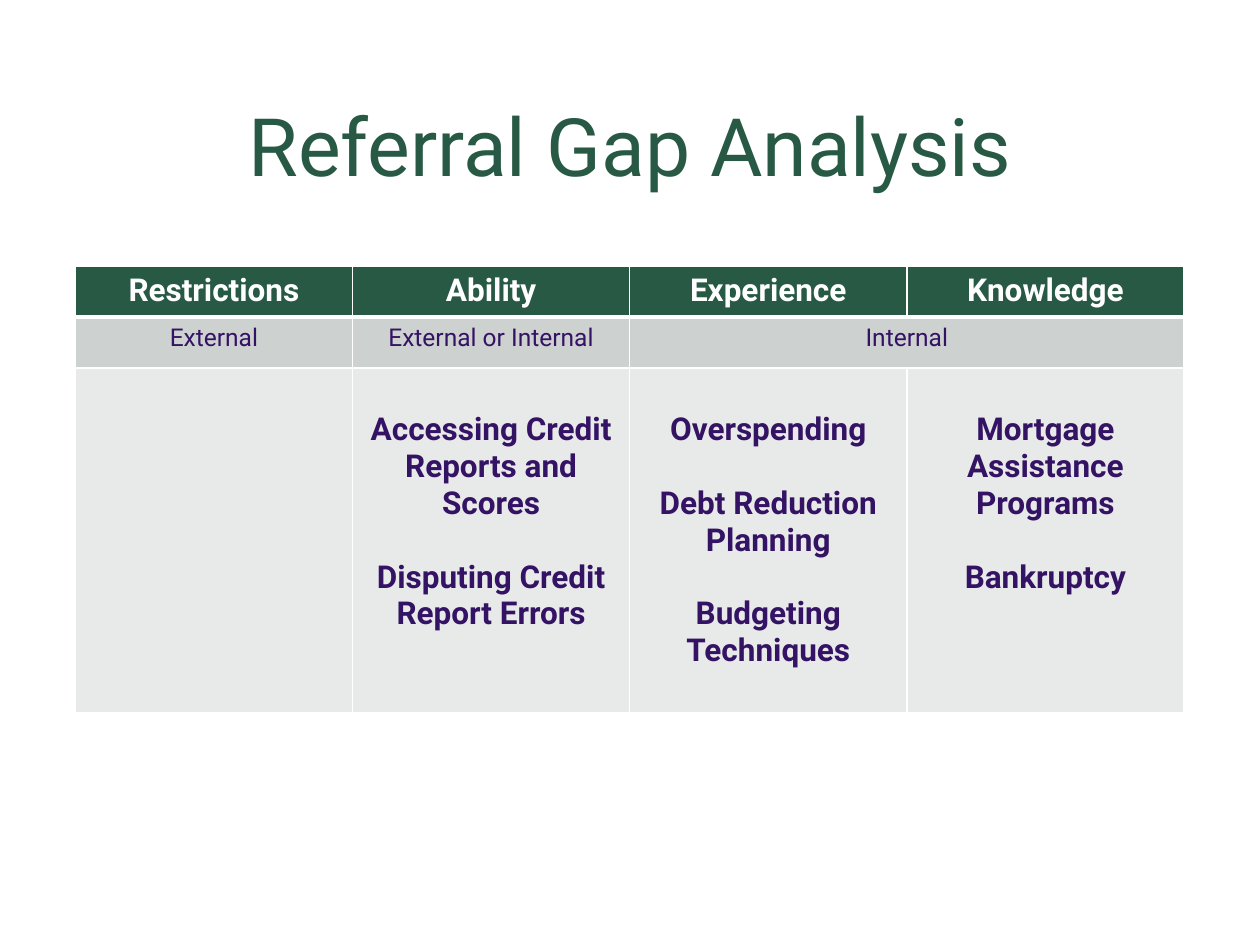
from dataclasses import dataclass

from lxml.etree import SubElement
from pptx import Presentation
from pptx.dml.color import RGBColor
from pptx.enum.text import MSO_ANCHOR, PP_ALIGN
from pptx.oxml.ns import qn
from pptx.util import Cm, Pt


@dataclass(frozen=True)
class Theme:
    font: str = "Roboto"
    green: str = "275944"
    purple: str = "341364"
    white: str = "FFFFFF"
    band: str = "CDD1CF"
    body: str = "E8EAE9"
    title_size: int = 46
    main_size: int = 18
    source_size: int = 14


theme = Theme()


def style(paragraph, size, color, bold=False):
    paragraph.alignment = PP_ALIGN.CENTER
    paragraph.font.name = theme.font
    paragraph.font.size = Pt(size)
    paragraph.font.bold = bold
    paragraph.font.color.rgb = RGBColor.from_string(color)


def paint(cell, fill, top_width, bottom_width):
    properties = cell._tc.get_or_add_tcPr()
    widths = {"lnL": 1, "lnR": 1, "lnT": top_width, "lnB": bottom_width}
    for side, width in widths.items():
        line = SubElement(properties, qn(f"a:{side}"), w=str(Pt(width)))
        SubElement(SubElement(line, qn("a:solidFill")), qn("a:srgbClr"), val=theme.white)
    cell.fill.solid()
    cell.fill.fore_color.rgb = RGBColor.from_string(fill)


prs = Presentation()
prs.slide_width, prs.slide_height = Cm(25.4), Cm(19.05)
slide = prs.slides.add_slide(prs.slide_layouts[6])

title = slide.shapes.add_textbox(Cm(1.52), Cm(0.3), Cm(22.35), Cm(3.71)).text_frame
title.word_wrap = True
title.vertical_anchor = MSO_ANCHOR.BOTTOM
title.text = "Referral Gap Analysis"
style(title.paragraphs[0], theme.title_size, theme.green)

gaps = ["Restrictions", "Ability", "Experience", "Knowledge"]
sources = ["External", "External or Internal", "Internal", ""]
topics = [
    [],
    [["Accessing Credit Reports and Scores"], ["Disputing Credit Report Errors"]],
    [["Overspending"], ["Debt Reduction", "Planning"], ["Budgeting Techniques"]],
    [["Mortgage Assistance Programs"], ["Bankruptcy"]],
]
row_heights = [1.03, 1.03, 6.95]

table = slide.shapes.add_table(
    3, 4, Cm(1.52), Cm(5.36), Cm(22.35), Cm(sum(row_heights))
).table
table.first_row = True
table.horz_banding = False
for row, height in zip(table.rows, row_heights):
    row.height = Cm(height)
table.cell(1, 2).merge(table.cell(1, 3))

for column, (gap, source, groups) in enumerate(zip(gaps, sources, topics)):
    header, origin, needs = (table.cell(row, column) for row in range(3))
    paint(header, theme.green, 1, 3)
    paint(origin, theme.band, 3, 1)
    paint(needs, theme.body, 1, 1)

    header.text = gap
    style(header.text_frame.paragraphs[0], theme.main_size, theme.white, True)
    if source:
        origin.text = source
        style(origin.text_frame.paragraphs[0], theme.source_size, theme.purple)

    needs.margin_top = Cm(0.87)
    lines = [(line, i > 0 and j == 0) for i, group in enumerate(groups) for j, line in enumerate(group)]
    needs.text = "\n".join(line for line, _ in lines)
    for paragraph, (_, starts_group) in zip(needs.text_frame.paragraphs, lines):
        style(paragraph, theme.main_size, theme.purple, True)
        if starts_group:
            paragraph.space_before = Pt(21)

prs.save("out.pptx")
